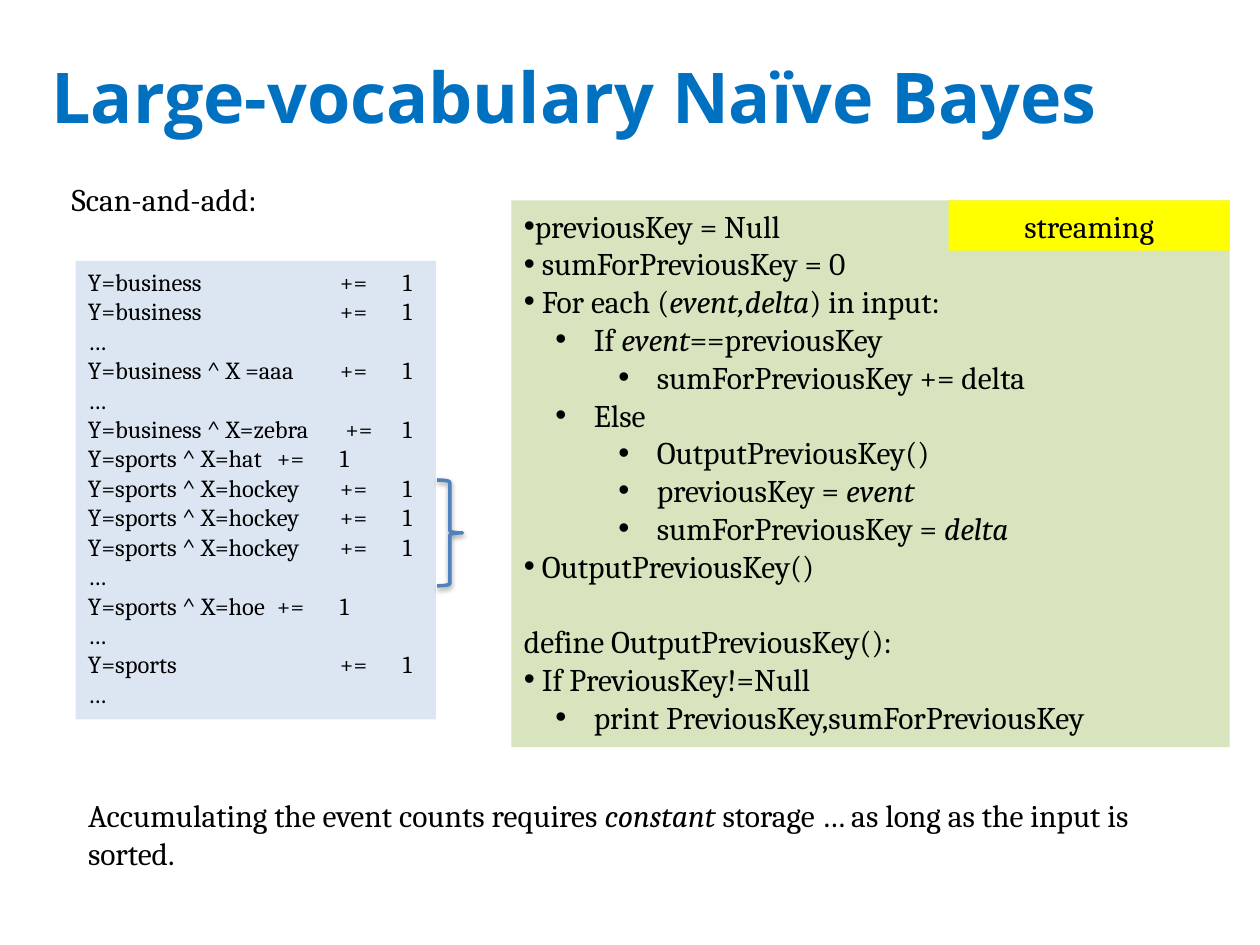
from dataclasses import dataclass

from lxml import etree
from pptx import Presentation
from pptx.dml.color import RGBColor
from pptx.enum.shapes import MSO_SHAPE
from pptx.enum.text import MSO_ANCHOR, PP_ALIGN
from pptx.oxml.ns import qn
from pptx.util import Inches, Pt

RECT, BRACE = MSO_SHAPE.RECTANGLE, MSO_SHAPE.RIGHT_BRACE
TOP, MIDDLE = MSO_ANCHOR.TOP, MSO_ANCHOR.MIDDLE
LEFT, CENTER = PP_ALIGN.LEFT, PP_ALIGN.CENTER
STEP = 0.5
STOPS = (1, 1.5, 2, 2.5)


@dataclass
class Line:
    text: str
    level: int | None = None
    gap: float = 0


@dataclass
class Box:
    at: tuple[float, float, float, float]
    lines: list[Line]
    size: int = 18
    fill: str | None = None
    font: str = "Cambria"
    color: str = "000000"
    bold: bool = False
    anchor: MSO_ANCHOR = TOP
    align: PP_ALIGN = LEFT


COUNTS = [
    "Y=business\t\t\t+=\t1",
    "Y=business\t\t\t+=\t1",
    "…",
    "Y=business ^ X =aaa\t+=\t1",
    "…",
    "Y=business ^ X=zebra\t +=\t1",
    "Y=sports ^ X=hat\t+=\t1",
    *["Y=sports ^ X=hockey\t+=\t1"] * 3,
    "…",
    "Y=sports ^ X=hoe\t+=\t1",
    "…",
    "Y=sports\t\t\t+=\t1",
    "…",
]

CODE = [
    Line("previousKey = Null", 0),
    Line(" sumForPreviousKey = 0", 0),
    Line(" For each (*event,delta*) in input:", 0),
    Line(" If *event*==previousKey", 1),
    Line(" sumForPreviousKey += delta", 2),
    Line(" Else", 1),
    Line(" OutputPreviousKey()", 2),
    Line(" previousKey = *event*", 2),
    Line(" sumForPreviousKey = *delta*", 2),
    Line(" OutputPreviousKey()", 0),
    Line("define OutputPreviousKey():", gap=21.6),
    Line(" If PreviousKey!=Null", 0),
    Line(" print PreviousKey,sumForPreviousKey", 1),
]

BOXES = [
    Box((0.31, 0.32, 9.46, 0.88), [Line("Large-vocabulary Naïve Bayes")], 40,
        font="Open Sans", color="0070C0", bold=True, anchor=MIDDLE),
    Box((0.6, 2.07, 2.86, 3.64), [Line(row) for row in COUNTS], 14, "DCE6F2"),
    Box((4.06, 1.59, 5.7, 4.34), CODE, fill="D7E4BD"),
    Box((0.6, 6.27, 8.52, 0.71), [Line(
        "Accumulating the event counts requires* constant* storage … "
        "as long as the input is sorted.")]),
    Box((7.53, 1.59, 2.23, 0.4), [Line("streaming")], fill="FFFF00", align=CENTER),
    Box((0.47, 1.38, 3.2, 0.71), [Line("Scan-and-add:")]),
]


def paint(part, code: str) -> None:
    """Give a fill or font a solid hex colour."""
    if hasattr(part, "solid"):
        part.solid()
        part.fore_color.rgb = RGBColor.from_string(code)
    else:
        part.color.rgb = RGBColor.from_string(code)


def add_bullet(para, level: int) -> None:
    """Put a bullet on a paragraph and indent it by its level."""
    props = para._p.get_or_add_pPr()
    para.level = level
    props.set("marL", str(Inches(level * STEP)))
    props.set("indent", str(Inches(-STEP / 2 if level else 0)))
    etree.SubElement(props, qn("a:buFont"), typeface="Arial")
    etree.SubElement(props, qn("a:buChar"), char="•")


def add_tabs(para) -> None:
    """Set the tab stops of the count columns."""
    tabs = etree.SubElement(para._p.get_or_add_pPr(), qn("a:tabLst"))
    for stop in STOPS:
        etree.SubElement(tabs, qn("a:tab"), pos=str(Inches(stop)), algn="l")


def add_line(para, line: Line, box: Box) -> None:
    """Write one line, with starred parts in italics."""
    para.alignment = box.align
    if line.gap:
        para.space_before = Pt(line.gap)
    if line.level is not None:
        add_bullet(para, line.level)
    if "\t" in line.text:
        add_tabs(para)
    for index, text in enumerate(line.text.split("*")):
        if text:
            run = para.add_run()
            run.text = text
            font = run.font
            font.name, font.size = box.font, Pt(box.size)
            font.bold, font.italic = box.bold, index % 2 == 1
            paint(font, box.color)


def add_box(slide, box: Box) -> None:
    """Draw a text box, or a filled panel with text."""
    place = [Inches(value) for value in box.at]
    if box.fill:
        shape = slide.shapes.add_shape(RECT, *place)
        shape.shadow.inherit = False
        shape.line.fill.background()
        paint(shape.fill, box.fill)
    else:
        shape = slide.shapes.add_textbox(*place)
    frame = shape.text_frame
    frame.word_wrap = True
    frame.vertical_anchor = box.anchor
    for index, line in enumerate(box.lines):
        para = frame.add_paragraph() if index else frame.paragraphs[0]
        add_line(para, line, box)


def add_brace(slide, at: tuple[float, float, float, float]) -> None:
    """Draw the brace beside the repeated events, with a soft shadow."""
    brace = slide.shapes.add_shape(BRACE, *[Inches(value) for value in at])
    brace.shadow.inherit = False
    brace.fill.background()
    paint(brace.line.fill, "4F81BD")
    brace.line.width = Pt(2)
    effects = brace._element.spPr.find(qn("a:effectLst"))
    shade = etree.SubElement(
        effects, qn("a:outerShdw"), blurRad=str(Pt(3.1)), dist=str(Pt(1.6)),
        dir="5400000", rotWithShape="0")
    color = etree.SubElement(shade, qn("a:srgbClr"), val="000000")
    etree.SubElement(color, qn("a:alpha"), val="38000")


def main() -> None:
    """Build the slide and save it."""
    deck = Presentation()
    deck.slide_width, deck.slide_height = Inches(10), Inches(7.5)
    slide = deck.slides.add_slide(deck.slide_layouts[6])
    for box in BOXES:
        add_box(slide, box)
    add_brace(slide, (3.47, 3.81, 0.2, 0.84))
    deck.save("out.pptx")


if __name__ == "__main__":
    main()
